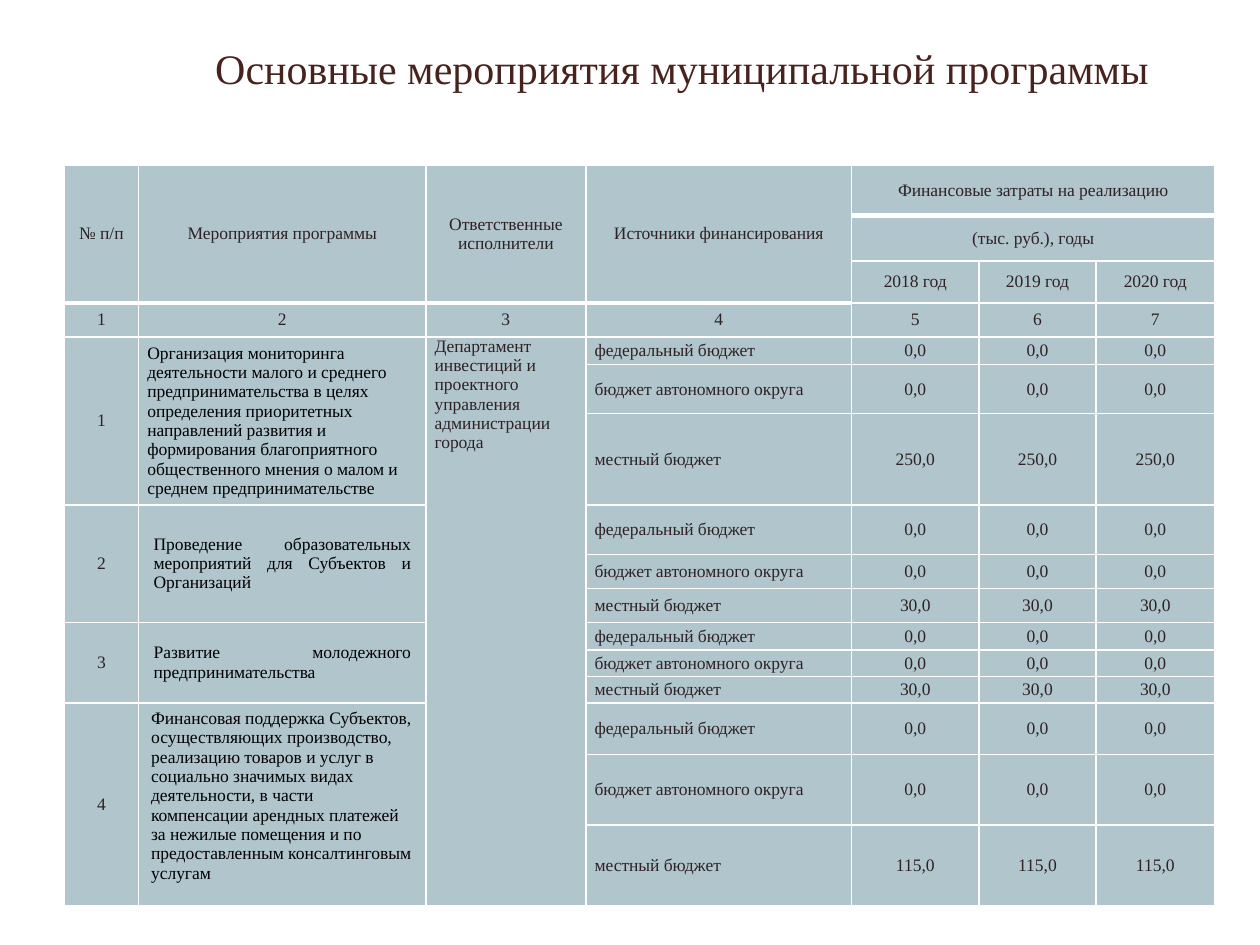
"""Builds a slide with a table of municipal programme activities and their funding."""
from lxml import etree
from pptx import Presentation
from pptx import util as u
from pptx.dml.color import RGBColor
from pptx.enum import text
from pptx.oxml import ns

THEME = {
    "font": "Times New Roman",
    "title_size": 24,
    "cell_size": 10,
    "title": "48231E",
    "ink": "2E2224",
    "activity": "000000",
    "fill": "B1C5CC",
    "border": "FFFFFF",
}
LEFT, CENTER, JUSTIFY = text.PP_ALIGN.LEFT, text.PP_ALIGN.CENTER, text.PP_ALIGN.JUSTIFY
MIDDLE, TOP = text.MSO_ANCHOR.MIDDLE, text.MSO_ANCHOR.TOP


def write(para, words, size, color):
    span = para.add_run()
    span.text = words
    for name, value in {"name": THEME["font"], "size": u.Pt(size)}.items():
        setattr(span.font, name, value)
    span.font.color.rgb = RGBColor.from_string(color)


def fill_cell(cell, words, align=CENTER, anchor=MIDDLE, side=0.07, edge=0, color=THEME["ink"]):
    layout = {
        "vertical_anchor": anchor,
        "margin_left": u.Inches(side),
        "margin_right": u.Inches(side),
        "margin_top": u.Inches(edge),
        "margin_bottom": u.Inches(edge),
    }
    for name, value in layout.items():
        setattr(cell, name, value)
    para = cell.text_frame.paragraphs[0]
    para.alignment = align
    write(para, words, THEME["cell_size"], color)


deck = Presentation()
deck.slide_width, deck.slide_height = u.Inches(10), u.Inches(7.5)
page = deck.slides.add_slide(deck.slide_layouts[6])

box = page.shapes.add_textbox(u.Inches(1.61), u.Inches(0.29), u.Inches(7.8), u.Inches(0.5))
box.text_frame.word_wrap = True
write(
    box.text_frame.paragraphs[0],
    "Основные мероприятия муниципальной программы",
    THEME["title_size"],
    THEME["title"],
)

widths = [0.59, 2.28, 1.27, 2.11, 1.01, 0.93, 0.94]
heights = [0.4, 0.36, 0.33, 0.27, 0.22, 0.39, 0.72, 0.39, 0.27, 0.27]
heights += [0.22, 0.21, 0.21, 0.41, 0.56, 0.64]
frame = page.shapes.add_table(
    len(heights), len(widths), u.Inches(0.51), u.Inches(1.31),
    u.Inches(sum(widths)), u.Inches(sum(heights)),
)
table = frame.table
table.first_row = table.horz_banding = False
for column, width in zip(table.columns, widths):
    column.width = u.Inches(width)
for row, height in zip(table.rows, heights):
    row.height = u.Inches(height)

for row in range(len(heights)):
    for column in range(len(widths)):
        cell = table.cell(row, column)
        for side in ("lnL", "lnR", "lnT", "lnB"):
            weight = 3 if row == 0 and side == "lnB" else 1
            line = etree.SubElement(
                cell._tc.get_or_add_tcPr(), ns.qn(f"a:{side}"), w=str(u.Pt(weight))
            )
            solid = etree.SubElement(line, ns.qn("a:solidFill"))
            etree.SubElement(solid, ns.qn("a:srgbClr"), val=THEME["border"])
        cell.fill.solid()
        cell.fill.fore_color.rgb = RGBColor.from_string(THEME["fill"])

headings = [
    "№ п/п", "Мероприятия программы", "Ответственные исполнители", "Источники финансирования",
]
for column, heading in enumerate(headings):
    table.cell(0, column).merge(table.cell(2, column))
    fill_cell(table.cell(0, column), heading)
for row, heading in enumerate(["Финансовые затраты на реализацию", "(тыс. руб.), годы"]):
    table.cell(row, 4).merge(table.cell(row, 6))
    fill_cell(table.cell(row, 4), heading)
for column, year in enumerate([2018, 2019, 2020], 4):
    fill_cell(table.cell(2, column), f"{year} год")
for column in range(len(widths)):
    fill_cell(table.cell(3, column), str(column + 1))

table.cell(4, 2).merge(table.cell(15, 2))
fill_cell(
    table.cell(4, 2),
    "Департамент инвестиций и проектного управления администрации города",
    align=LEFT, anchor=TOP,
)

activities = [
    (
        "Организация мониторинга деятельности малого и среднего предпринимательства "
        "в целях определения приоритетных направлений развития и формирования "
        "благоприятного общественного мнения о малом и среднем предпринимательстве",
        "250,0",
        {"align": LEFT},
    ),
    (
        "Проведение образовательных мероприятий для Субъектов и Организаций",
        "30,0",
        {"align": JUSTIFY, "side": 0.12},
    ),
    (
        "Развитие молодежного предпринимательства",
        "30,0",
        {"align": JUSTIFY, "side": 0.12},
    ),
    (
        "Финансовая поддержка Субъектов, осуществляющих производство, реализацию "
        "товаров и услуг в социально значимых видах деятельности, в части компенсации "
        "арендных платежей за нежилые помещения и по предоставленным консалтинговым услугам",
        "115,0",
        {"align": LEFT, "anchor": TOP, "side": 0.1, "edge": 0.05},
    ),
]
sources = ["федеральный бюджет", "бюджет автономного округа", "местный бюджет"]
for number, (activity, local_cost, style) in enumerate(activities, 1):
    first = 1 + 3 * number
    for column in (0, 1):
        table.cell(first, column).merge(table.cell(first + 2, column))
    fill_cell(table.cell(first, 0), str(number))
    fill_cell(table.cell(first, 1), activity, color=THEME["activity"], **style)
    for row, (source, cost) in enumerate(zip(sources, ["0,0", "0,0", local_cost]), first):
        fill_cell(table.cell(row, 3), source, align=LEFT)
        for column in (4, 5, 6):
            fill_cell(table.cell(row, column), cost)

deck.save("out.pptx")
